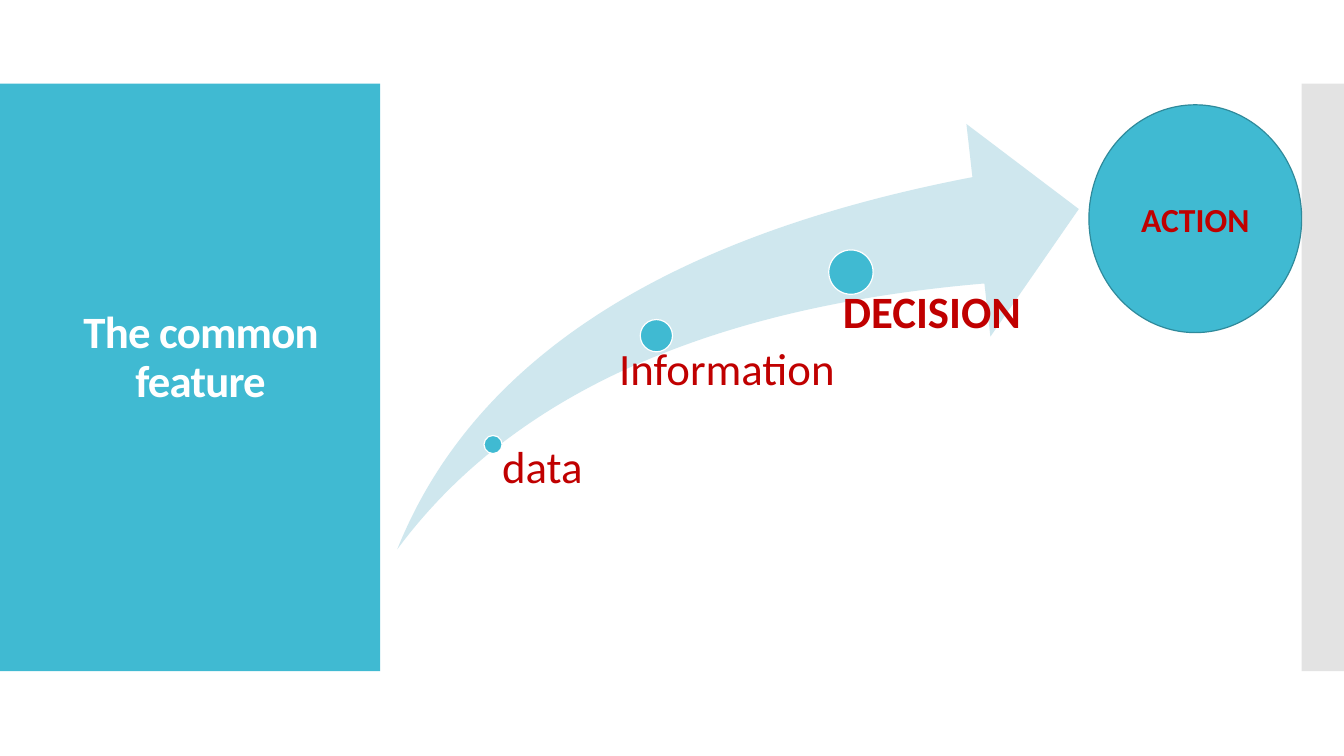
from lxml.etree import SubElement
from pptx import Presentation
from pptx.dml.color import RGBColor
from pptx.enum.shapes import MSO_SHAPE
from pptx.enum.text import MSO_ANCHOR, PP_ALIGN
from pptx.oxml.ns import qn
from pptx.util import Inches, Pt

TEAL = RGBColor(0x40, 0xBA, 0xD2)
DARK_TEAL = RGBColor(0x2F, 0x8A, 0x9B)
PALE_TEAL = RGBColor(0xCF, 0xE7, 0xEE)
GREY = RGBColor(0xC8, 0xC8, 0xC8)
WHITE = RGBColor(0xFF, 0xFF, 0xFF)
RED = RGBColor(0xC0, 0x00, 0x00)
FONT = "Calibri"

TITLE = "The common feature"
GOAL = "ACTION"
STEPS = [
    {"label": "data", "centre": (4.89, 4.41), "dot": 0.18,
     "box": (4.89, 4.41, 1.57, 1.22), "inset": 0.09, "bold": False},
    {"label": "Information", "centre": (6.51, 3.33), "dot": 0.32,
     "box": (5.97, 3.44, 3.31, 2.3), "inset": 0.17, "bold": False},
    {"label": "DECISION", "centre": (8.44, 2.7), "dot": 0.44,
     "box": (8.13, 2.88, 2.37, 2.93), "inset": 0.23, "bold": True},
]
SLIDE_W, SLIDE_H = 13.33, 7.5
BAND_TOP, BAND_H = 0.83, 5.83
PANEL_W, EDGE_W = 3.77, 0.42

prs = Presentation()
prs.slide_width, prs.slide_height = Inches(SLIDE_W), Inches(SLIDE_H)
slide = prs.slides.add_slide(prs.slide_layouts[6])


def add_figure(preset, box, fill, line=None):
    figure = slide.shapes.add_shape(preset, *map(Inches, box))
    figure.shadow.inherit = False
    figure.fill.solid()
    figure.fill.fore_color.rgb = fill
    if line is None:
        figure.line.fill.background()
    else:
        figure.line.color.rgb = line
        figure.line.width = Pt(0.85)
    return figure


def add_textbox(box):
    return slide.shapes.add_textbox(*map(Inches, box)).text_frame


def write(frame, text, size, color, bold, align, spacing=1.0):
    frame.word_wrap = True
    paragraph = frame.paragraphs[0]
    paragraph.alignment = align
    paragraph.line_spacing = spacing
    run = paragraph.add_run()
    run.text = text
    run.font.name = FONT
    run.font.size = Pt(size)
    run.font.bold = bold
    run.font.color.rgb = color
    return run


add_figure(MSO_SHAPE.RECTANGLE, (0, BAND_TOP, PANEL_W, BAND_H), TEAL)
edge = add_figure(MSO_SHAPE.RECTANGLE,
                  (SLIDE_W - EDGE_W, BAND_TOP, EDGE_W, BAND_H), GREY)
edge_color = edge._element.spPr.find(qn("a:solidFill")).find(qn("a:srgbClr"))
SubElement(edge_color, qn("a:alpha")).set("val", "50000")

heading = add_textbox((0.28, 1.04, 3.42, 5.03))
heading.vertical_anchor = MSO_ANCHOR.MIDDLE
heading_run = write(heading, TITLE, 32, WHITE, True, PP_ALIGN.CENTER, 0.9)
heading_run._r.get_or_add_rPr().set("spc", "-60")

swoosh = add_figure(MSO_SHAPE.SWOOSH_ARROW, (3.94, 1.23, 6.76, 4.22), PALE_TEAL)
swoosh.adjustments[0] = swoosh.adjustments[1] = 0.25

for step in STEPS:
    (x, y), dot = step["centre"], step["dot"]
    add_figure(MSO_SHAPE.OVAL, (x - dot / 2, y - dot / 2, dot, dot), TEAL, WHITE)
    label = add_textbox(step["box"])
    label.margin_left = Inches(step["inset"])
    label.margin_top = label.margin_right = label.margin_bottom = 0
    write(label, step["label"], 32, RED, step["bold"], PP_ALIGN.LEFT, 0.9)

goal = add_figure(MSO_SHAPE.FLOWCHART_CONNECTOR, (10.8, 1.04, 2.11, 2.26),
                  TEAL, DARK_TEAL)
goal.text_frame.vertical_anchor = MSO_ANCHOR.MIDDLE
write(goal.text_frame, GOAL, 24, RED, True, PP_ALIGN.CENTER)

prs.save("out.pptx")
